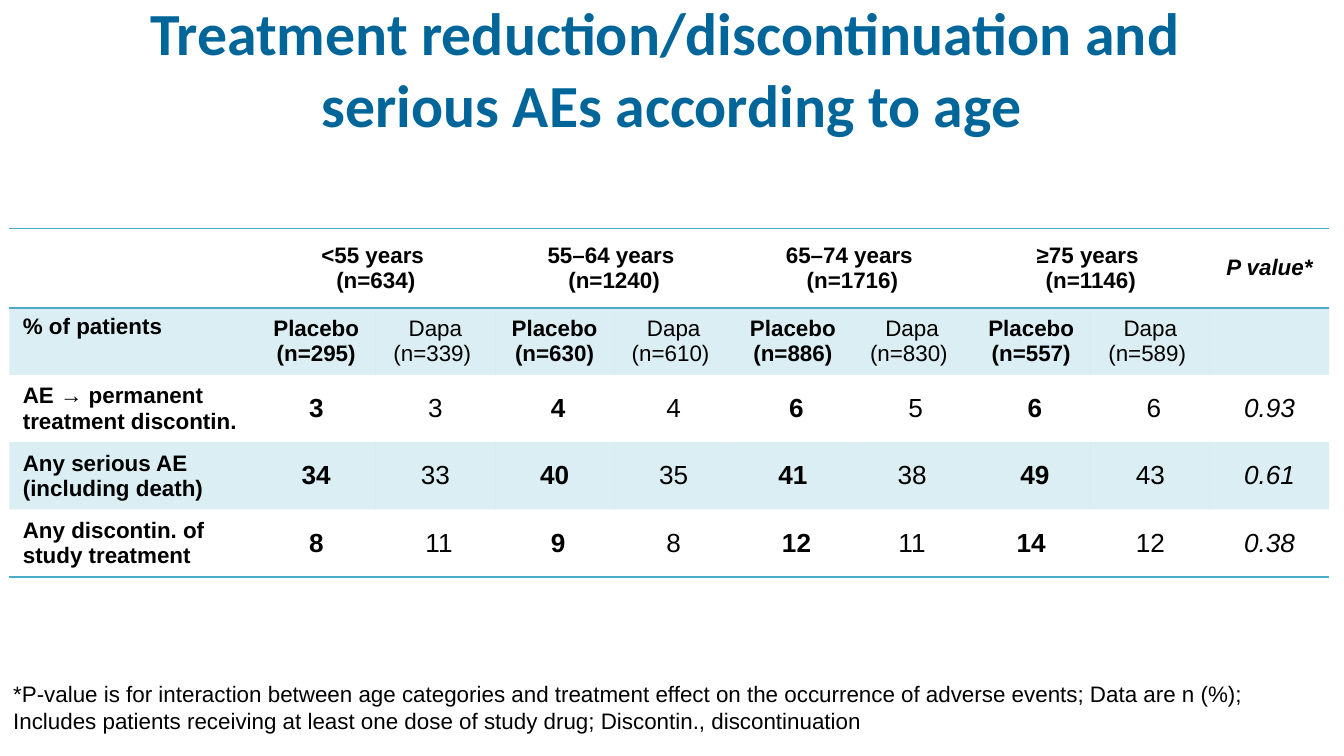
"""Build a slide with a table of adverse events by age group."""
from dataclasses import dataclass

from lxml import etree
from pptx import Presentation
from pptx.dml.color import RGBColor
from pptx.enum.text import MSO_ANCHOR, PP_ALIGN
from pptx.oxml.ns import qn
from pptx.util import Inches, Pt

LEFT, CENTER = PP_ALIGN.LEFT, PP_ALIGN.CENTER
TOP, MIDDLE = MSO_ANCHOR.TOP, MSO_ANCHOR.MIDDLE
COLORS = {"title": "006699", "text": "000000", "accent": "4BACC6"}
NO_STYLE = "{2D5ABB26-0587-4C30-8999-92F81FD0307C}"
SLIDE_W = 10
SLIDE_H = SLIDE_W * 9 / 16
TABLE_W, TABLE_H, LABEL_W = 9.82, 2.59, 1.84
ROW_HEIGHTS = (0.59, 0.3, 0.5, 0.5, 0.5)
BORDERS = {0: ("lnT", "lnB"), 4: ("lnB",)}
BANDED_ROWS = (1, 3)


@dataclass
class Style:
    size: int = 12
    bold: bool = False
    italic: bool = False
    align: PP_ALIGN = CENTER
    anchor: MSO_ANCHOR = MIDDLE
    font: str = "Arial"
    color: str = "text"


@dataclass
class AgeGroup:
    years: str
    n: int
    placebo_n: int
    dapa_n: int


@dataclass
class Event:
    label: str
    values: tuple[str, ...]
    p_value: str


GROUPS = [
    AgeGroup("<55", 634, 295, 339),
    AgeGroup("55–64", 1240, 630, 610),
    AgeGroup("65–74", 1716, 886, 830),
    AgeGroup("≥75", 1146, 557, 589),
]
EVENTS = [
    Event("AE → permanent treatment discontin.",
          ("3", "3", " 4", "4", " 6", " 5", " 6", " 6"), "0.93"),
    Event("Any serious AE (including death)",
          ("34", "33", "40", "35", "41", "38", " 49", "43"), "0.61"),
    Event("Any discontin. of study treatment",
          ("8", " 11", " 9", "8", " 12", "11", "14", "12"), "0.38"),
]


def write(tf, text: str, style: Style) -> None:
    """Set the text of a frame and format all of its runs."""
    tf.text = text
    for p in tf.paragraphs:
        p.alignment = style.align
        for r in p.runs:
            r.font.name = style.font
            r.font.size = Pt(style.size)
            r.font.bold = style.bold
            r.font.italic = style.italic
            r.font.color.rgb = RGBColor.from_string(COLORS[style.color])


def add_text(s, top: float, height: float, text: str, style: Style) -> None:
    """Add a wrapped text box across the full slide width."""
    tf = s.shapes.add_textbox(0, Inches(top), Inches(SLIDE_W),
                              Inches(height)).text_frame
    tf.word_wrap = True
    tf.vertical_anchor = style.anchor
    write(tf, text, style)


def fill_cell(cell, text: str, style: Style) -> None:
    """Write a table cell and anchor its text."""
    cell.vertical_anchor = style.anchor
    write(cell.text_frame, text, style)


def paint_cell(cell, row: int) -> None:
    """Give a cell the borders and the band fill of its row."""
    tc_pr = cell._tc.get_or_add_tcPr()
    for side in BORDERS.get(row, ()):
        ln = etree.SubElement(tc_pr, qn(f"a:{side}"), w=str(Pt(1)))
        solid = etree.SubElement(ln, qn("a:solidFill"))
        etree.SubElement(solid, qn("a:srgbClr"), val=COLORS["accent"])
    if row in BANDED_ROWS:
        cell.fill.solid()
        cell.fill.fore_color.rgb = RGBColor.from_string(COLORS["accent"])
        etree.SubElement(tc_pr.find(f"{qn('a:solidFill')}/{qn('a:srgbClr')}"),
                         qn("a:alpha"), val="20000")
    else:
        cell.fill.background()


def add_event_table(s) -> None:
    """Add the table of events per age group and treatment arm."""
    cols = 2 * len(GROUPS) + 2
    last = cols - 1
    sp = s.shapes.add_table(len(ROW_HEIGHTS), cols, Inches(0.07), Inches(1.7),
                            Inches(TABLE_W), Inches(TABLE_H))
    table = sp.table
    table.first_row = table.horz_banding = False
    table._tbl.tblPr.find(qn("a:tableStyleId")).text = NO_STYLE
    for i, col in enumerate(table.columns):
        col.width = Inches((TABLE_W - LABEL_W) / last if i else LABEL_W)
    for i, height in enumerate(ROW_HEIGHTS):
        table.rows[i].height = Inches(height)
        for j in range(cols):
            paint_cell(table.cell(i, j), i)
    sp.height = Inches(TABLE_H)

    bold = Style(bold=True)
    for i, g in enumerate(GROUPS):
        c = 2 * i + 1
        table.cell(0, c).merge(table.cell(0, c + 1))
        fill_cell(table.cell(0, c), f"{g.years} years \n(n={g.n})", bold)
        fill_cell(table.cell(1, c), f"Placebo (n={g.placebo_n})", bold)
        fill_cell(table.cell(1, c + 1), f"Dapa (n={g.dapa_n}) ", Style())
    fill_cell(table.cell(0, last), "P value*", Style(bold=True, italic=True))
    fill_cell(table.cell(1, 0), "% of patients",
              Style(bold=True, align=LEFT, anchor=TOP))
    for i, event in enumerate(EVENTS, 2):
        fill_cell(table.cell(i, 0), event.label, Style(bold=True, align=LEFT))
        for j, value in enumerate(event.values, 1):
            fill_cell(table.cell(i, j), value, Style(14, bold=j % 2 == 1))
        fill_cell(table.cell(i, last), event.p_value, Style(14, italic=True))


def main() -> None:
    """Build and save the slide."""
    prs = Presentation()
    prs.slide_width, prs.slide_height = Inches(SLIDE_W), Inches(SLIDE_H)
    s = prs.slides.add_slide(prs.slide_layouts[6])
    add_text(s, 0.05, 0.91,
             "Treatment reduction/discontinuation and \vserious AEs according to age",
             Style(32, bold=True, font="Calibri", color="title"))
    add_event_table(s)
    add_text(s, 5.01, 0.5,
             "*P-value is for interaction between age categories and treatment effect "
             "on the occurrence of adverse events; Data are n (%); Includes patients "
             "receiving at least one dose of study drug; Discontin., discontinuation",
             Style(align=LEFT, anchor=TOP))
    prs.save("out.pptx")


if __name__ == "__main__":
    main()
